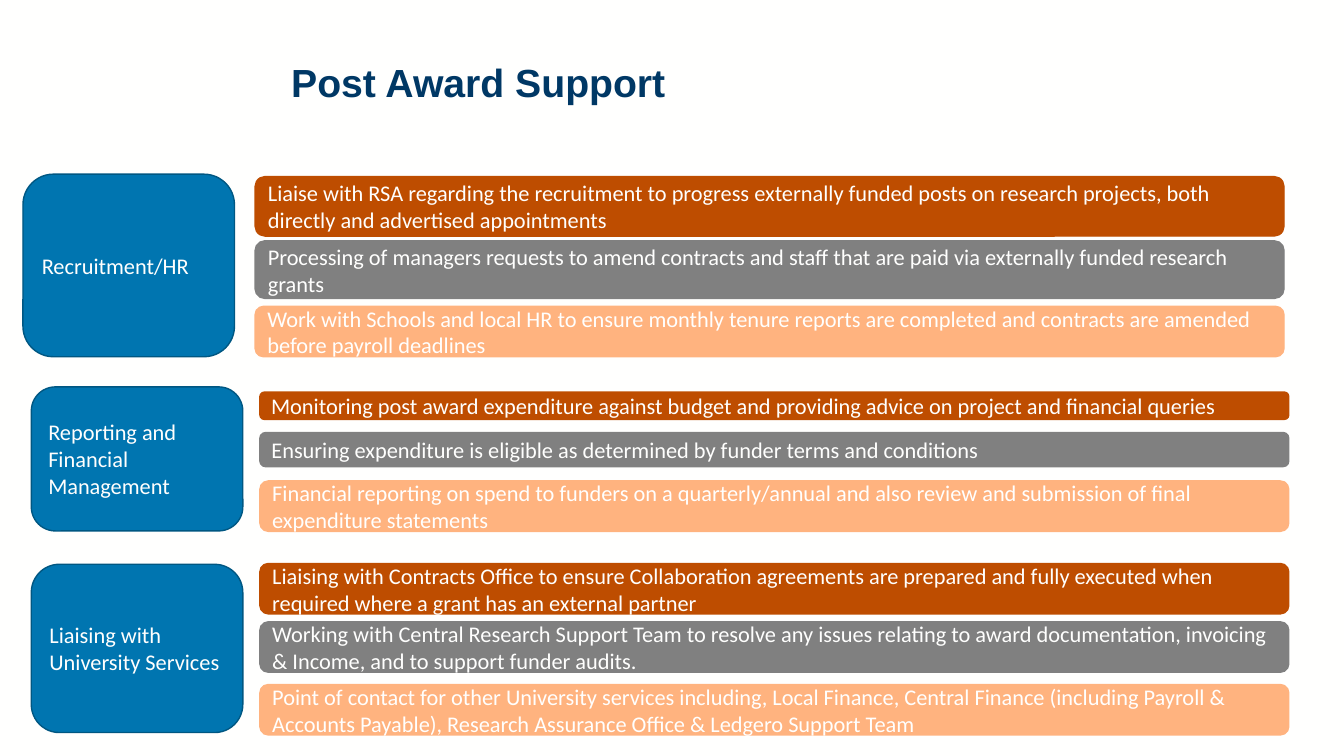
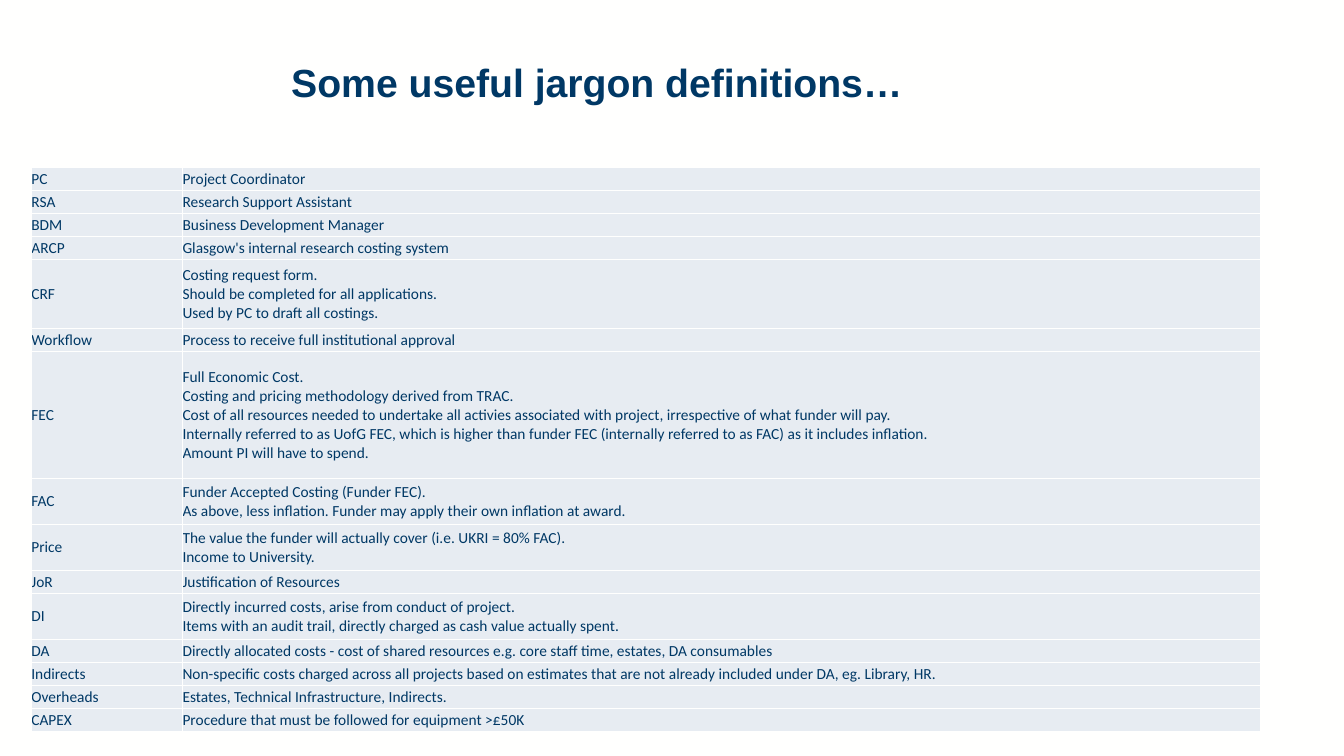
import lxml.etree
import pptx
import pptx.dml.color
import pptx.enum.shapes
import pptx.enum.text
import pptx.oxml.ns
import pptx.util

Cm = pptx.util.Cm
Pt = pptx.util.Pt
qn = pptx.oxml.ns.qn

PAPER = "FFFFFE"
NAVY = "003865"
BLUE = "0075B0"
BLUE_EDGE = "005782"
BAND_COLOURS = ["BE4D00", "808080", "FFB37F"]
CELL = "E7ECF2"

SUPPORT_TITLE = "Post Award Support"
SUPPORT_AREAS = [
    {
        "name": "Recruitment/HR", "box": (0.58, 4.39, 4.6), "band_left": 6.43,
        "duties": [
            (4.45, 1.5, "Liaise with RSA regarding the recruitment to progress externally funded posts "
                        "on research projects, both directly and advertised appointments"),
            (6.07, 1.45, "Processing of managers requests to amend contracts and staff that are paid via "
                         "externally funded research grants"),
            (7.72, 1.27, "Work with Schools and local HR to ensure monthly tenure reports are completed "
                         "and contracts are amended before payroll deadlines"),
        ],
    },
    {
        "name": "Reporting and Financial Management", "box": (0.79, 9.75, 3.63), "band_left": 6.55,
        "duties": [
            (9.88, 0.69, "Monitoring post award expenditure against budget and providing advice on "
                         "project and financial queries"),
            (10.9, 0.86, "Ensuring expenditure is eligible as determined by funder terms and conditions"),
            (12.12, 1.27, "Financial reporting on spend to funders on a quarterly/annual and also review "
                          "and submission of final expenditure statements"),
        ],
    },
    {
        "name": "Liaising with University Services", "box": (0.79, 14.22, 4.24), "band_left": 6.55,
        "duties": [
            (14.2, 1.27, "Liaising with Contracts Office to ensure Collaboration agreements are prepared "
                         "and fully executed when required where a grant has an external partner"),
            (15.67, 1.27, "Working with Central Research Support Team to resolve any issues relating to "
                          "award documentation, invoicing & Income, and to support funder audits."),
            (17.25, 1.27, "Point of contact for other University services including, Local Finance, "
                          "Central Finance (including Payroll & Accounts Payable), Research Assurance "
                          "Office & Ledgero Support Team"),
        ],
    },
]
BOX_WIDTH = 5.33
BAND_WIDTH = 25.93

JARGON_TITLE = "Some useful jargon definitions…"
JARGON = [
    ("PC", ["Project Coordinator"]),
    ("RSA", ["Research Support Assistant"]),
    ("BDM", ["Business Development Manager"]),
    ("ARCP", ["Glasgow's internal research costing system"]),
    ("CRF", ["Costing request form.", "Should be completed for all applications.",
             "Used by PC to draft all costings."]),
    ("Workflow", ["Process to receive full institutional approval"]),
    ("FEC", ["Full Economic Cost.", "Costing and pricing methodology derived from TRAC.",
             "Cost of all resources needed to undertake all activies associated with project, "
             "irrespective of what funder will pay.",
             "Internally referred to as UofG FEC, which is higher than funder FEC (internally "
             "referred to as FAC) as it includes inflation.",
             "Amount PI will have to spend."]),
    ("FAC", ["Funder Accepted Costing (Funder FEC).",
             "As above, less inflation. Funder may apply their own inflation at award."]),
    ("Price", ["The value the funder will actually cover (i.e. UKRI = 80% FAC).",
               "Income to University."]),
    ("JoR", ["Justification of Resources"]),
    ("DI", ["Directly incurred costs, arise from conduct of project.",
            "Items with an audit trail, directly charged as cash value actually spent."]),
    ("DA", ["Directly allocated costs - cost of shared resources e.g. core staff time, estates, "
            "DA consumables"]),
    ("Indirects", ["Non-specific costs charged across all projects based on estimates that are not "
                   "already included under DA, eg. Library, HR."]),
    ("Overheads", ["Estates, Technical Infrastructure, Indirects."]),
    ("CAPEX", ["Procedure that must be followed for equipment >£50K"]),
]
JARGON_COLUMNS = [3.81, 27.18]
LINE_HEIGHT = 0.58
TALL_ROWS = {"FEC": 3.2}


def colour(value):
    return pptx.dml.color.RGBColor.from_string(value)


def write(paragraph, lines, size, font, ink, bold=False):
    for index, line in enumerate(lines):
        if index:
            paragraph.add_line_break()
        run = paragraph.add_run()
        run.text = line
        run.font.size = Pt(size)
        run.font.name = font
        run.font.bold = bold
        run.font.color.rgb = colour(ink)


def new_slide(deck, title):
    slide = deck.slides.add_slide(deck.slide_layouts[6])
    slide.background.fill.solid()
    slide.background.fill.fore_color.rgb = colour(PAPER)
    frame = slide.shapes.add_textbox(Cm(7.09), Cm(1.47), Cm(25.58), Cm(1.83)).text_frame
    frame.word_wrap = True
    frame.paragraphs[0].line_spacing = 0.9
    write(frame.paragraphs[0], [title], 28, "Arial", NAVY, True)
    return slide


def add_panel(slide, left, top, width, height, text, fill, edge):
    panel = slide.shapes.add_shape(pptx.enum.shapes.MSO_SHAPE.ROUNDED_RECTANGLE,
                                   Cm(left), Cm(top), Cm(width), Cm(height))
    panel.shadow.inherit = False
    panel.fill.solid()
    panel.fill.fore_color.rgb = colour(fill)
    panel.line.color.rgb = colour(edge)
    panel.line.width = Pt(1)
    frame = panel.text_frame
    frame.word_wrap = True
    frame.vertical_anchor = pptx.enum.text.MSO_ANCHOR.MIDDLE
    frame.paragraphs[0].alignment = pptx.enum.text.PP_ALIGN.LEFT
    write(frame.paragraphs[0], [text], 16, "Calibri", PAPER)


def add_support(deck):
    slide = new_slide(deck, SUPPORT_TITLE)
    for area in SUPPORT_AREAS:
        left, top, height = area["box"]
        add_panel(slide, left, top, BOX_WIDTH, height, area["name"], BLUE, BLUE_EDGE)
        for (top, height, duty), band in zip(area["duties"], BAND_COLOURS):
            add_panel(slide, area["band_left"], top, BAND_WIDTH, height, duty, band, band)


def style_cell(cell):
    properties = cell._tc.get_or_add_tcPr()
    for side in ("a:lnL", "a:lnR", "a:lnT", "a:lnB"):
        border = lxml.etree.SubElement(properties, qn(side), w=str(Pt(1)))
        solid = lxml.etree.SubElement(border, qn("a:solidFill"))
        lxml.etree.SubElement(solid, qn("a:srgbClr"), val=PAPER)
    cell.fill.solid()
    cell.fill.fore_color.rgb = colour(CELL)
    cell.margin_left = cell.margin_right = cell.margin_top = cell.margin_bottom = 0
    cell.vertical_anchor = pptx.enum.text.MSO_ANCHOR.MIDDLE


def add_jargon(deck):
    slide = new_slide(deck, JARGON_TITLE)
    heights = [TALL_ROWS.get(term, LINE_HEIGHT * len(lines)) for term, lines in JARGON]
    table = slide.shapes.add_table(len(JARGON), len(JARGON_COLUMNS), Cm(0.79), Cm(4.22),
                                   Cm(sum(JARGON_COLUMNS)), Cm(sum(heights))).table
    table.first_row = False
    table.horz_banding = False
    for column, width in zip(table.columns, JARGON_COLUMNS):
        column.width = Cm(width)
    for row, height, (term, meaning) in zip(table.rows, heights, JARGON):
        row.height = Cm(height)
        for cell, lines in zip(row.cells, ([term], meaning)):
            style_cell(cell)
            write(cell.text_frame.paragraphs[0], lines, 11, "Calibri", NAVY)


def main():
    deck = pptx.Presentation()
    deck.slide_width = Cm(33.87)
    deck.slide_height = Cm(19.05)
    add_support(deck)
    add_jargon(deck)
    deck.save("out.pptx")


if __name__ == "__main__":
    main()
